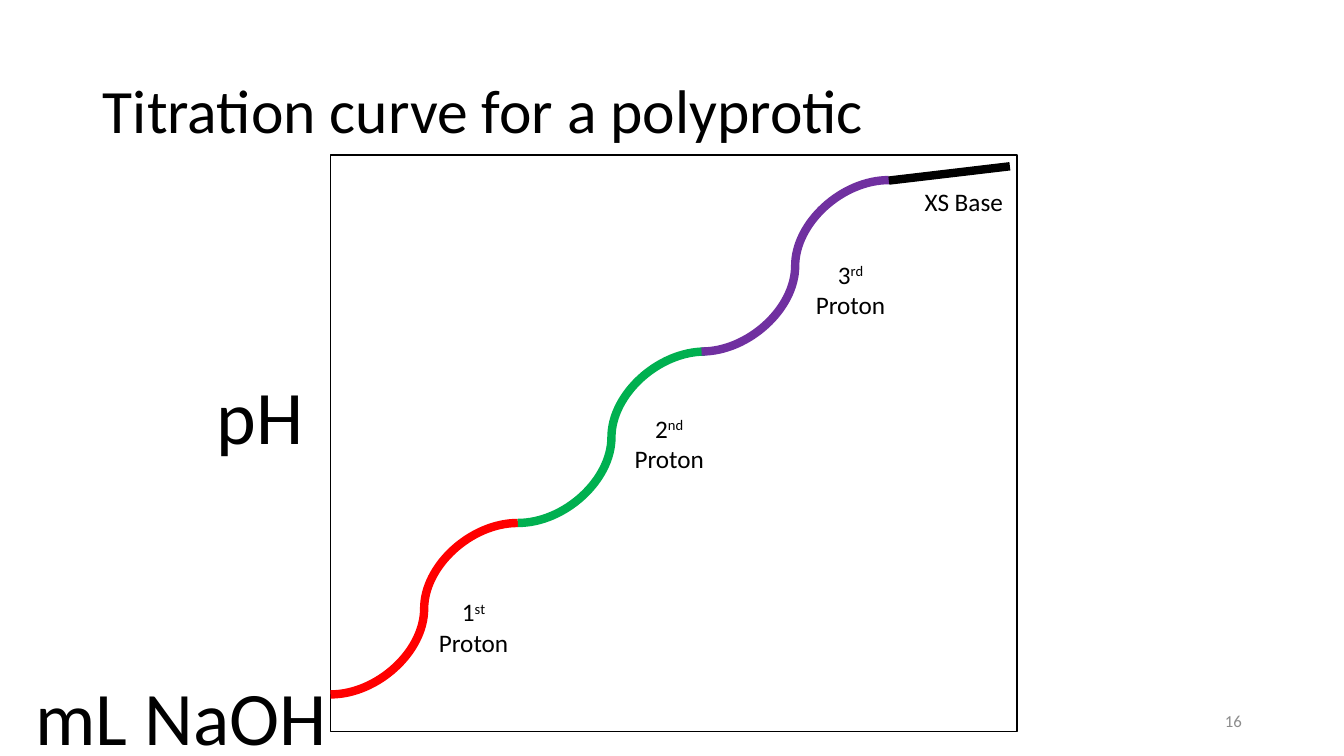
from dataclasses import dataclass

from lxml.etree import SubElement
from pptx import Presentation
from pptx.dml.color import RGBColor
from pptx.enum.shapes import MSO_CONNECTOR as Connector, MSO_SHAPE as Shape
from pptx.enum.text import MSO_ANCHOR as Anchor, MSO_AUTO_SIZE as AutoSize, PP_ALIGN as Align
from pptx.oxml.ns import qn
from pptx.util import Cm, Pt


@dataclass(frozen=True)
class Theme:
    """Font, colours, type sizes and line widths of the slide."""
    font: str = "Calibri"
    ink: str = "000000"
    muted: str = "8C8C8C"
    protons: tuple = ("FF0000", "00B050", "7030A0")
    title: int = 44
    axis: int = 54
    label: int = 18
    footer: int = 12
    curve: int = 6
    frame: int = 1


THEME = Theme()
STEP_X, STEP_Y = 4.72, 4.32
PROTON_STEPS = [
    ("1", "st", (8.33, 17.5), (10.69, 14.91)),
    ("2", "nd", (13.05, 13.18), (15.62, 10.29)),
    ("3", "rd", (17.68, 8.86), (20.19, 6.4)),
]


def write_text(shape, *parts, size, color=THEME.ink, align=Align.LEFT,
               anchor=Anchor.TOP, spacing=1.0):
    """Write one paragraph; every second part is superscript."""
    frame = shape.text_frame
    frame.word_wrap = True
    frame.auto_size = AutoSize.NONE
    frame.vertical_anchor = anchor
    paragraph = frame.paragraphs[0]
    paragraph.alignment = align
    paragraph.line_spacing = spacing
    for index, text in enumerate(parts):
        run = paragraph.add_run()
        run.text = text
        run.font.name = THEME.font
        run.font.size = Pt(size)
        run.font.color.rgb = RGBColor.from_string(color)
        if index % 2:
            run.font._element.set("baseline", "30000")


def add_label(slide, box, *parts, **text_format):
    """Add a text box at left, top, width and height in centimetres."""
    shape = slide.shapes.add_textbox(*map(Cm, box))
    write_text(shape, *parts, **text_format)


def add_title(slide, box, text):
    """Place and fill the title placeholder."""
    title = slide.shapes.title
    title.left, title.top, title.width, title.height = map(Cm, box)
    write_text(title, text, size=THEME.title, anchor=Anchor.MIDDLE, spacing=0.9)


def add_plot_frame(slide, box):
    """Add the thin outline around the plot."""
    shape = slide.shapes.add_shape(Shape.RECTANGLE, *map(Cm, box))
    shape.shadow.inherit = False
    shape.fill.background()
    shape.line.color.rgb = RGBColor.from_string(THEME.ink)
    shape.line.width = Pt(THEME.frame)


def add_curve_segment(slide, kind, start, end, color):
    """Add one thick segment of the titration curve."""
    segment = slide.shapes.add_connector(kind, *map(Cm, (*start, *end)))
    segment.line.color.rgb = RGBColor.from_string(color)
    segment.line.width = Pt(THEME.curve)
    SubElement(segment._element.spPr, qn("a:effectLst"))


def add_proton_step(slide, number, suffix, start, label_corner, color):
    """Add the S-shaped step and the label of one proton."""
    end = (start[0] + STEP_X, start[1] - STEP_Y)
    add_curve_segment(slide, Connector.CURVE, start, end, color)
    add_label(slide, (*label_corner, 2.49, 1.8), number, suffix, " Proton",
              size=THEME.label, align=Align.CENTER)


def main():
    """Build the titration slide and save it."""
    presentation = Presentation()
    presentation.slide_width, presentation.slide_height = Cm(33.87), Cm(19.05)
    slide = presentation.slides.add_slide(presentation.slide_layouts[5])

    add_title(slide, (2.34, 1.02, 29.21, 3.68), "Titration curve for a polyprotic")
    add_plot_frame(slide, (8.33, 3.91, 17.3, 14.53))
    for step, color in zip(PROTON_STEPS, THEME.protons):
        add_proton_step(slide, *step, color)
    add_curve_segment(slide, Connector.STRAIGHT, (22.4, 4.55), (25.45, 4.19), THEME.ink)

    add_label(slide, (5.21, 9.17, 3.43, 2.57), "pH", size=THEME.axis)
    add_label(slide, (0.64, 16.76, 8.03, 2.57), "mL NaOH", size=THEME.axis)
    add_label(slide, (22.99, 4.57, 2.6, 1.02), "XS Base",
              size=THEME.label, align=Align.CENTER)
    add_label(slide, (23.93, 17.65, 7.62, 1.02), "16", size=THEME.footer,
              color=THEME.muted, align=Align.RIGHT, anchor=Anchor.MIDDLE)
    presentation.save("out.pptx")


if __name__ == "__main__":
    main()
